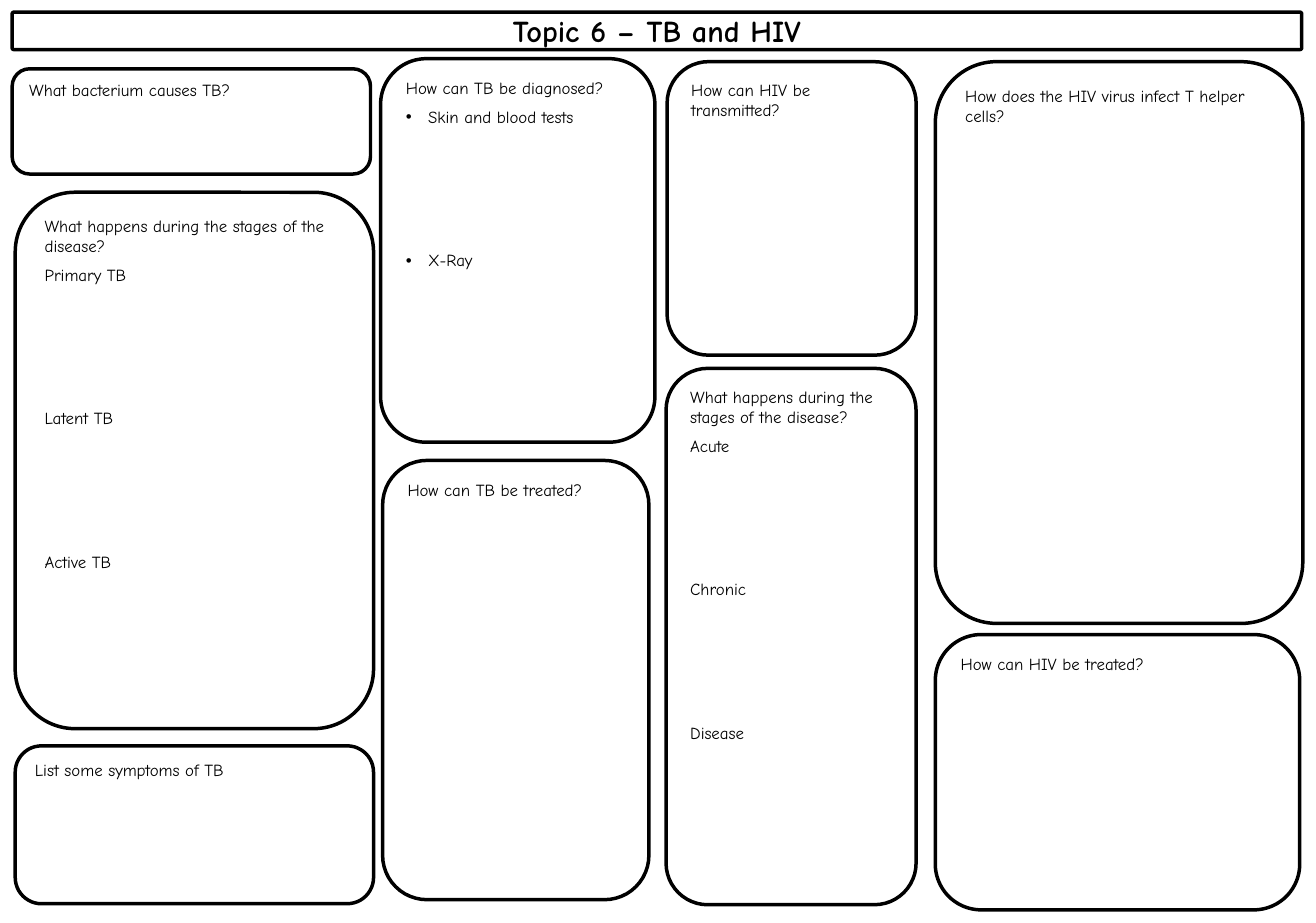
from lxml.etree import SubElement
from pptx import Presentation
from pptx.dml.color import RGBColor
from pptx.enum.shapes import MSO_SHAPE
from pptx.enum.text import MSO_ANCHOR, PP_ALIGN
from pptx.oxml.ns import qn
from pptx.util import Emu, Pt

PX = 7620  # 120 px to the inch
INK, PAPER = "000000", "FFFFFF"
QUESTION = {"name": "Comic Neue", "size": Pt(10), "bold": False}
TITLE = {"name": "Comic Neue", "size": Pt(18), "bold": True}
LINE_GAP, ANSWER_GAP = 5, 73  # points above a paragraph
BULLET_INDENT = 22
STAGES = "What happens during the stages of the disease?"

# left, top, width, height, question, prompts with answer space between, bulleted
BOXES = [
    # TB: cause, stages, symptoms
    (12, 68, 354, 104, "What bacterium causes TB?", [], False),
    (15, 190, 354, 530, STAGES, ["Primary TB", "Latent TB", "Active TB"], False),
    (15, 737, 354, 156, "List some symptoms of TB", [], False),
    # TB: diagnosis, treatment
    (376, 58, 271, 379, "How can TB be diagnosed?",
     ["Skin and blood tests", "X-Ray"], True),
    (378, 455, 263, 434, "How can TB be treated?", [], False),
    # HIV: transmission, stages
    (659, 61, 246, 290, "How can HIV be transmitted?", [], False),
    (658, 364, 247, 530, STAGES, ["Acute", "Chronic", "Disease"], False),
    # HIV: infection, treatment
    (924, 61, 363, 555, "How does the HIV virus infect T helper cells?", [], False),
    (924, 627, 360, 272, "How can HIV be treated?", [], False),
]


def px(n):
    return Emu(n * PX)


def color(hex_value):
    return RGBColor.from_string(hex_value)


def add_box(s, left, top, width, height):
    sp = s.shapes.add_shape(MSO_SHAPE.ROUNDED_RECTANGLE,
                            px(left), px(top), px(width), px(height))
    sp.shadow.inherit = False
    sp.fill.solid()
    sp.fill.fore_color.rgb = color(PAPER)
    sp.line.color.rgb = color(INK)
    sp.line.width = Pt(2.08)
    sp.text_frame.word_wrap = True
    sp.text_frame.vertical_anchor = MSO_ANCHOR.TOP
    return sp


def write(p, text, fmt, align=PP_ALIGN.LEFT, before=0):
    p.alignment = align
    p.space_before = Pt(before)
    r = p.add_run()
    r.text = text
    for key, value in fmt.items():
        setattr(r.font, key, value)
    r.font.color.rgb = color(INK)


def add_bullet(p):
    pPr = p._p.get_or_add_pPr()
    pPr.set("marL", str(px(BULLET_INDENT)))
    pPr.set("indent", str(-px(BULLET_INDENT)))
    SubElement(pPr, qn("a:buFont")).set("typeface", "Arial")
    SubElement(pPr, qn("a:buChar")).set("char", "•")


def add_title(s, text):
    sp = add_box(s, 12, 12, 1274, 37)
    sp.adjustments[0] = 0.045
    sp.fill.background()
    tf = sp.text_frame
    tf.vertical_anchor = MSO_ANCHOR.MIDDLE
    write(tf.paragraphs[0], text, TITLE, PP_ALIGN.CENTER)


def add_question(s, left, top, width, height, question, prompts, bulleted):
    tf = add_box(s, left, top, width, height).text_frame
    write(tf.paragraphs[0], question, QUESTION)
    for i, prompt in enumerate(prompts):
        p = tf.add_paragraph()
        write(p, prompt, QUESTION, before=ANSWER_GAP if i else LINE_GAP)
        if bulleted:
            add_bullet(p)


def main():
    prs = Presentation()
    prs.slide_width, prs.slide_height = px(1300), px(912)
    s = prs.slides.add_slide(prs.slide_layouts[6])
    add_title(s, "Topic 6 – TB and HIV")
    for box in BOXES:
        add_question(s, *box)
    prs.save("out.pptx")


if __name__ == "__main__":
    main()
